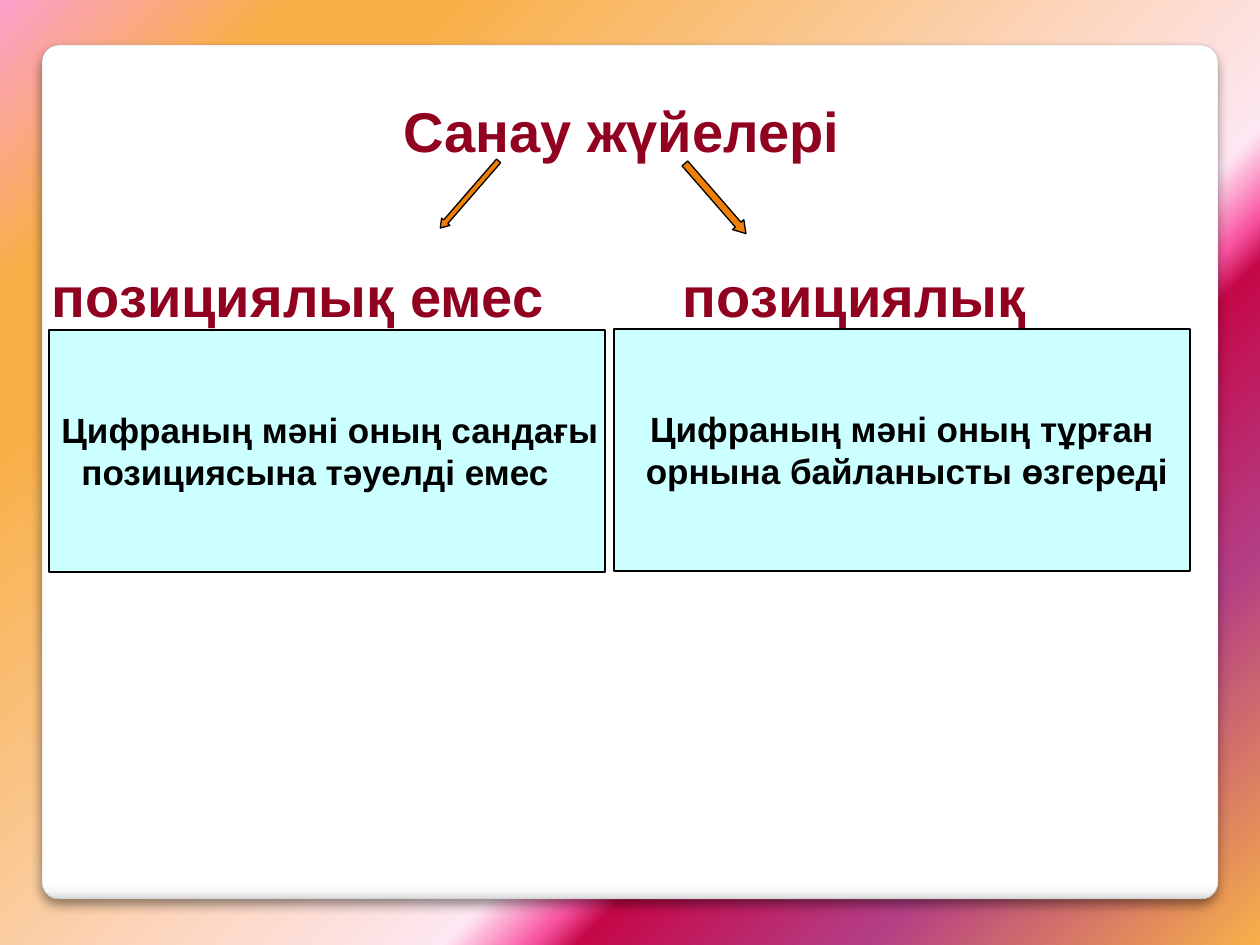
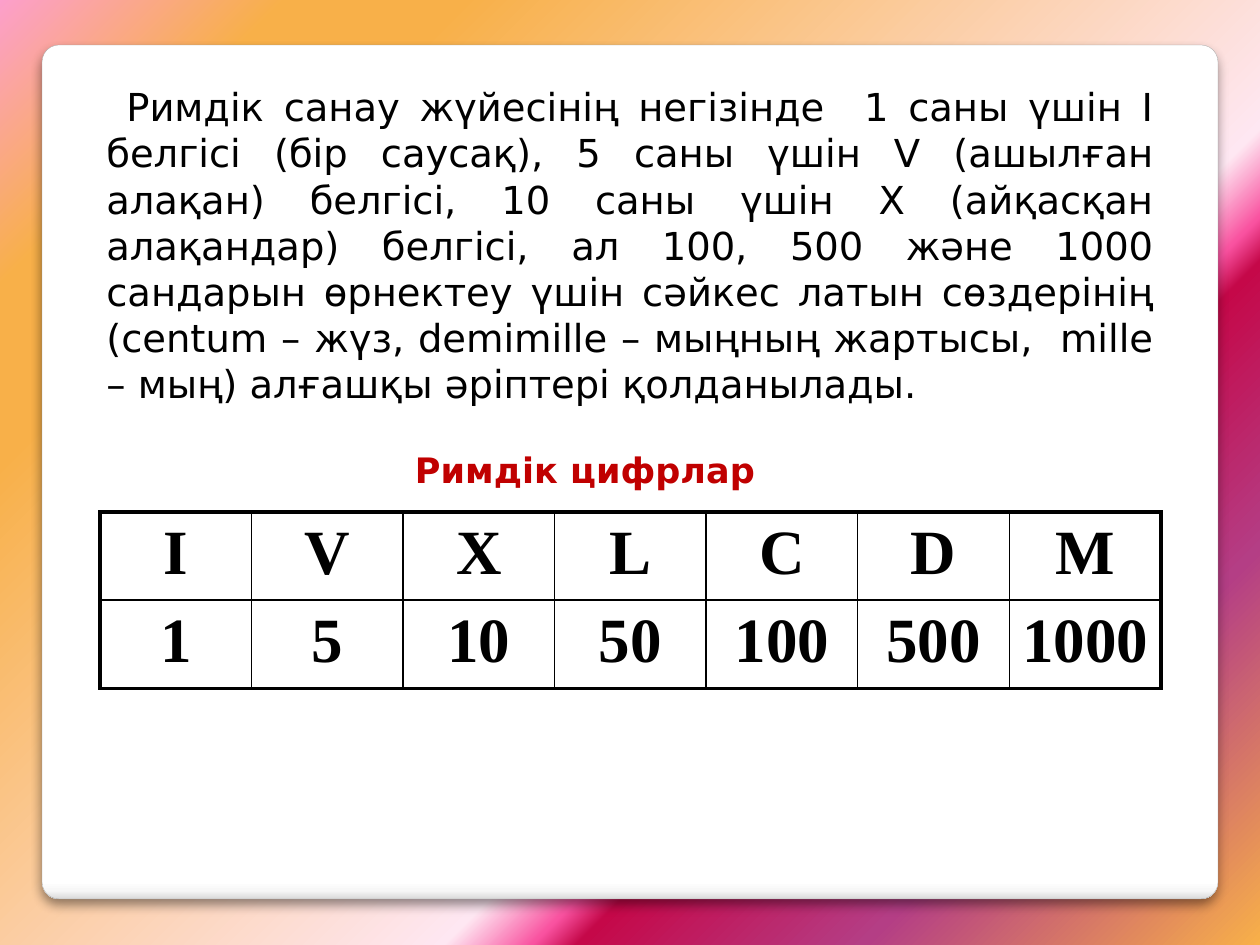
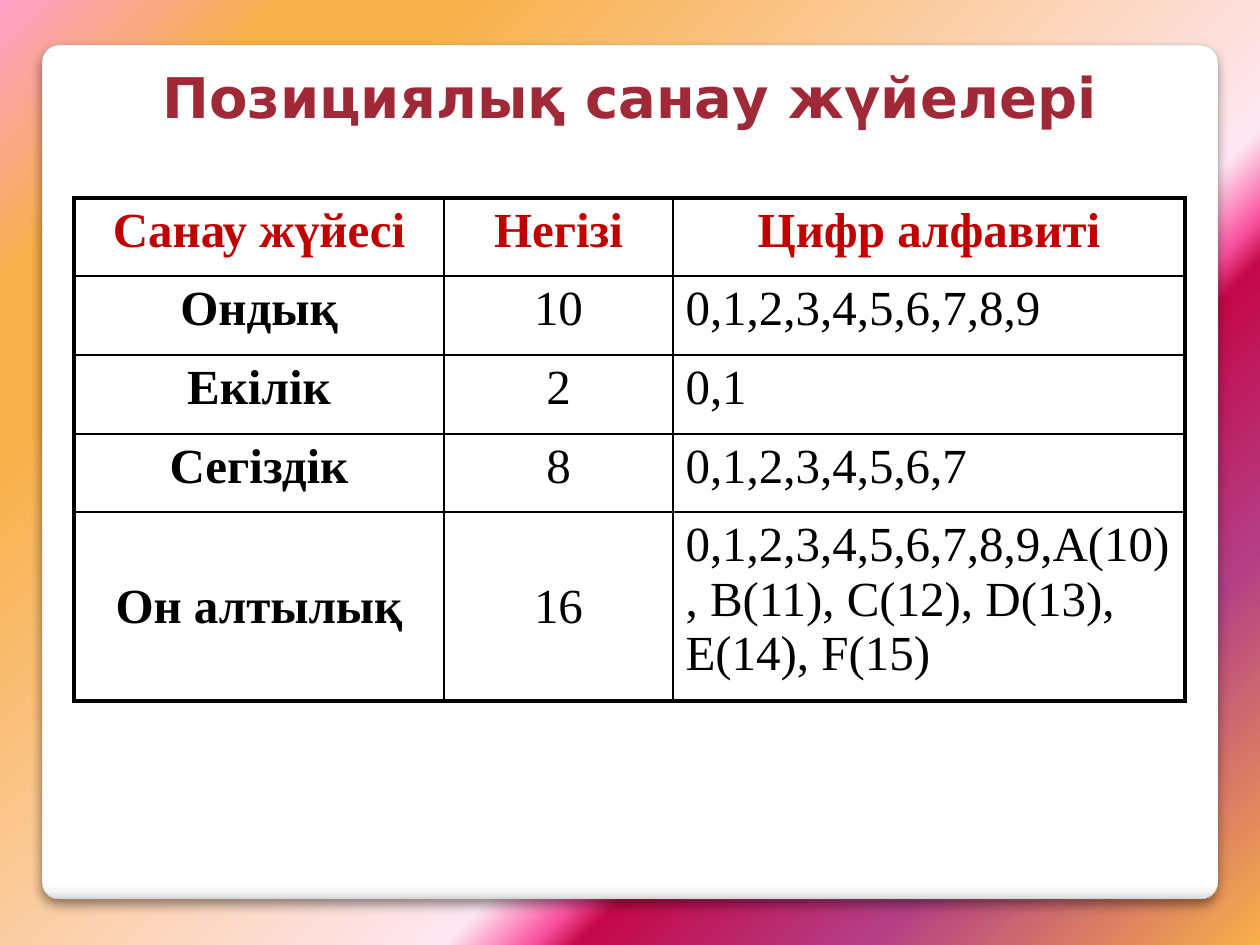
"""Builds three slides on number systems: kinds, Roman numerals, positional systems."""
import pptx
import pptx.util
import pptx.oxml
import pptx.oxml.ns
from pptx.dml.color import RGBColor
from pptx.enum.shapes import MSO_SHAPE
from pptx.enum.text import MSO_ANCHOR, PP_ALIGN

PX = 914400 / 126
WIDTH, HEIGHT = 1260, 945
BLACK = RGBColor(0x00, 0x00, 0x00)
WHITE = RGBColor(0xFF, 0xFF, 0xFF)
CYAN = RGBColor(0xCC, 0xFF, 0xFF)
ORANGE = RGBColor(0xF0, 0x7F, 0x09)
MAROON = RGBColor(0x91, 0x01, 0x20)
RED = RGBColor(0xC0, 0x00, 0x00)
BRICK = RGBColor(0x9F, 0x29, 0x36)
GRAY = RGBColor(0xA4, 0xA4, 0xA4)
SANS, WIDE, SERIF = "Arial", "DejaVu Sans", "Times New Roman"
LEFT, CENTER, JUSTIFY = PP_ALIGN.LEFT, PP_ALIGN.CENTER, PP_ALIGN.JUSTIFY
NS = pptx.oxml.ns.nsdecls("a")
THIN, THICK = 1, 2.25

BACKDROP = [(0, "FC9FCB"), (13, "F8B049"), (21, "F8B049"), (63, "FEE7F2"),
            (67, "F952A0"), (69, "C50849"), (82, "B43E85"), (100, "F8B049")]
PANEL = [(0, "FFFFFF"), (98, "FFFFFF"), (99, "F7F7F7"), (100, "DADADA")]

HEADINGS = [("Санау жүйелері", (39, 97, 1165, 64), CENTER),
            ("позициялық емес", (52, 262, 540, 64), LEFT),
            ("позициялық", (683, 262, 400, 64), LEFT)]
DEFINITIONS = [
    (["Цифраның мәні оның сандағы", "позициясына тәуелді емес"], (49, 330, 556, 242), LEFT, 20),
    (["Цифраның мәні оның тұрған", "орнына байланысты өзгереді"], (614, 329, 576, 242), CENTER, 10),
]
ARROWS = [((708, 152, 15, 93), 319, 0.79), ((464, 150, 11, 89), 41, 0.75)]

ROMAN_TEXT = (
    "Римдік санау жүйесінің негізінде  1 саны үшін І белгісі (бір саусақ), "
    "5 саны үшін V (ашылған алақан) белгісі, 10 саны үшін Х (айқасқан алақандар) "
    "белгісі, ал 100, 500 және 1000 сандарын өрнектеу үшін сәйкес латын сөздерінің "
    "(centum – жүз, demimille – мыңның жартысы,  mille – мың) "
    "алғашқы әріптері қолданылады.")
ROMAN_TITLE = "Римдік цифрлар"
ROMAN = [["I", "V", "X", "L", "C", "D", "M"],
         ["1", "5", "10", "50", "100", "500", "1000"]]

SYSTEMS_TITLE = "Позициялық санау жүйелері"
SYSTEMS = [["Санау жүйесі", "Негізі", "Цифр алфавиті"],
           ["Ондық", "10", "0,1,2,3,4,5,6,7,8,9"],
           ["Екілік", "2", "0,1"],
           ["Сегіздік", "8", "0,1,2,3,4,5,6,7"],
           ["Он алтылық", "16",
            "0,1,2,3,4,5,6,7,8,9,A(10), B(11), C(12), D(13), E(14), F(15)"]]


def emu(px):
    return pptx.util.Emu(round(px * PX))


def box(rect):
    return [emu(v) for v in rect]


def write(tf, lines, size=20, font=SANS, color=BLACK, bold=True, align=LEFT,
          indent=0, last_margin=0):
    lines = [lines] if isinstance(lines, str) else lines
    for i, line in enumerate(lines):
        p = tf.paragraphs[0] if i == 0 else tf.add_paragraph()
        p.alignment = align
        if indent:
            p._p.get_or_add_pPr().set("indent", str(emu(indent)))
        if last_margin and i == len(lines) - 1:
            p._p.get_or_add_pPr().set("marL", str(emu(last_margin)))
        r = p.add_run()
        r.text = line
        r.font.size = pptx.util.Pt(size)
        r.font.name = font
        r.font.bold = bold
        r.font.color.rgb = color


def add_text(s, rect, text, margin=None, **fmt):
    tf = s.shapes.add_textbox(*box(rect)).text_frame
    tf.word_wrap = True
    if margin is not None:
        tf.margin_left = tf.margin_right = tf.margin_top = tf.margin_bottom = margin
    write(tf, text, **fmt)


def add_shape(s, kind, rect, fill=None, line=BLACK, weight=0.75):
    sp = s.shapes.add_shape(kind, *box(rect))
    sp.shadow.inherit = False
    if fill is not None:
        sp.fill.solid()
        sp.fill.fore_color.rgb = fill
    sp.line.color.rgb = line
    sp.line.width = pptx.util.Pt(weight)
    return sp


def set_gradient(fill, element, stops, angle):
    fill.gradient()
    fill.gradient_angle = 360 - angle
    gs_list = element.find(".//" + pptx.oxml.ns.qn("a:gsLst"))
    for gs in list(gs_list):
        gs_list.remove(gs)
    for pos, color in stops:
        gs_list.append(pptx.oxml.parse_xml(
            f'<a:gs {NS} pos="{pos * 1000}"><a:srgbClr val="{color}"/></a:gs>'))


def add_slide(prs):
    s = prs.slides.add_slide(prs.slide_layouts[6])
    sp = add_shape(s, MSO_SHAPE.ROUNDED_RECTANGLE, (42, 45, 1176, 854), line=GRAY, weight=0.16)
    sp.adjustments[0] = 0.02
    set_gradient(sp.fill, sp._element, PANEL, 90)
    sp._element.spPr.find(pptx.oxml.ns.qn("a:effectLst")).append(pptx.oxml.parse_xml(
        f'<a:outerShdw {NS} blurRad="76200" dist="50800" dir="5400000" algn="tl" rotWithShape="0">'
        '<a:srgbClr val="000000"><a:alpha val="44000"/></a:srgbClr></a:outerShdw>'))
    return s


def set_borders(cell, **weights):
    tc_pr = cell._tc.get_or_add_tcPr()
    for side, weight in weights.items():
        tc_pr.append(pptx.oxml.parse_xml(
            f'<a:ln{side} {NS} w="{round(weight * 12700)}"><a:solidFill>'
            f'<a:srgbClr val="{BLACK}"/></a:solidFill></a:ln{side}>'))


def add_table(s, x, y, widths, heights, rows, cell_format):
    rect = box((x, y, sum(widths), sum(heights)))
    table = s.shapes.add_table(len(rows), len(widths), *rect).table
    table.first_row = table.horz_banding = False
    for col, w in zip(table.columns, widths):
        col.width = emu(w)
    last_row, last_col = len(rows) - 1, len(widths) - 1
    for i, (values, h) in enumerate(zip(rows, heights)):
        table.rows[i].height = emu(h)
        for j, value in enumerate(values):
            cell = table.cell(i, j)
            set_borders(cell, L=THIN if j else THICK, R=THICK if j == last_col else THIN,
                        T=THIN if i else THICK, B=THICK if i == last_row else THIN)
            cell.fill.solid()
            cell.fill.fore_color.rgb = WHITE
            if j < last_col and h > 2 * heights[0]:
                cell.vertical_anchor = MSO_ANCHOR.MIDDLE
            write(cell.text_frame, value, font=SERIF, **cell_format(i, j))


def kinds_slide(prs):
    s = add_slide(prs)
    for lines, rect, align, shift in DEFINITIONS:
        tf = add_shape(s, MSO_SHAPE.RECTANGLE, rect, CYAN).text_frame
        tf.word_wrap = False
        tf.vertical_anchor = MSO_ANCHOR.MIDDLE
        write(tf, lines, align=align, last_margin=shift)
    for text, rect, align in HEADINGS:
        add_text(s, rect, text, margin=0, size=32, color=MAROON, align=align)
    for rect, angle, head in ARROWS:
        sp = add_shape(s, MSO_SHAPE.DOWN_ARROW, rect, ORANGE)
        sp.adjustments[1] = head
        sp.rotation = angle


def roman_slide(prs):
    s = add_slide(prs)
    add_text(s, (94, 77, 1072, 339), ROMAN_TEXT, size=22, font=WIDE, bold=False,
             align=JUSTIFY, indent=20)
    add_text(s, (322, 442, 526, 56), ROMAN_TITLE, font=WIDE, color=RED, align=CENTER)
    count = len(ROMAN[0])
    add_table(s, 100, 512, [1061 / count] * count, [88, 88], ROMAN,
              lambda i, j: dict(size=36, align=CENTER))


def systems_slide(prs):
    s = add_slide(prs)
    add_text(s, (74, 56, 1112, 81), SYSTEMS_TITLE, size=32, font=WIDE, color=BRICK, align=CENTER)
    add_table(s, 74, 198, [370, 229, 512], [78, 79, 79, 78, 188], SYSTEMS,
              lambda i, j: dict(size=28, bold=i == 0 or j == 0, color=BLACK if i else RED,
                                align=LEFT if i and j == 2 else CENTER))


def main():
    prs = pptx.Presentation()
    prs.slide_width, prs.slide_height = emu(WIDTH), emu(HEIGHT)
    master = prs.slide_master
    set_gradient(master.background.fill, master.element, BACKDROP, 45)
    kinds_slide(prs)
    roman_slide(prs)
    systems_slide(prs)
    prs.save("out.pptx")


if __name__ == "__main__":
    main()
